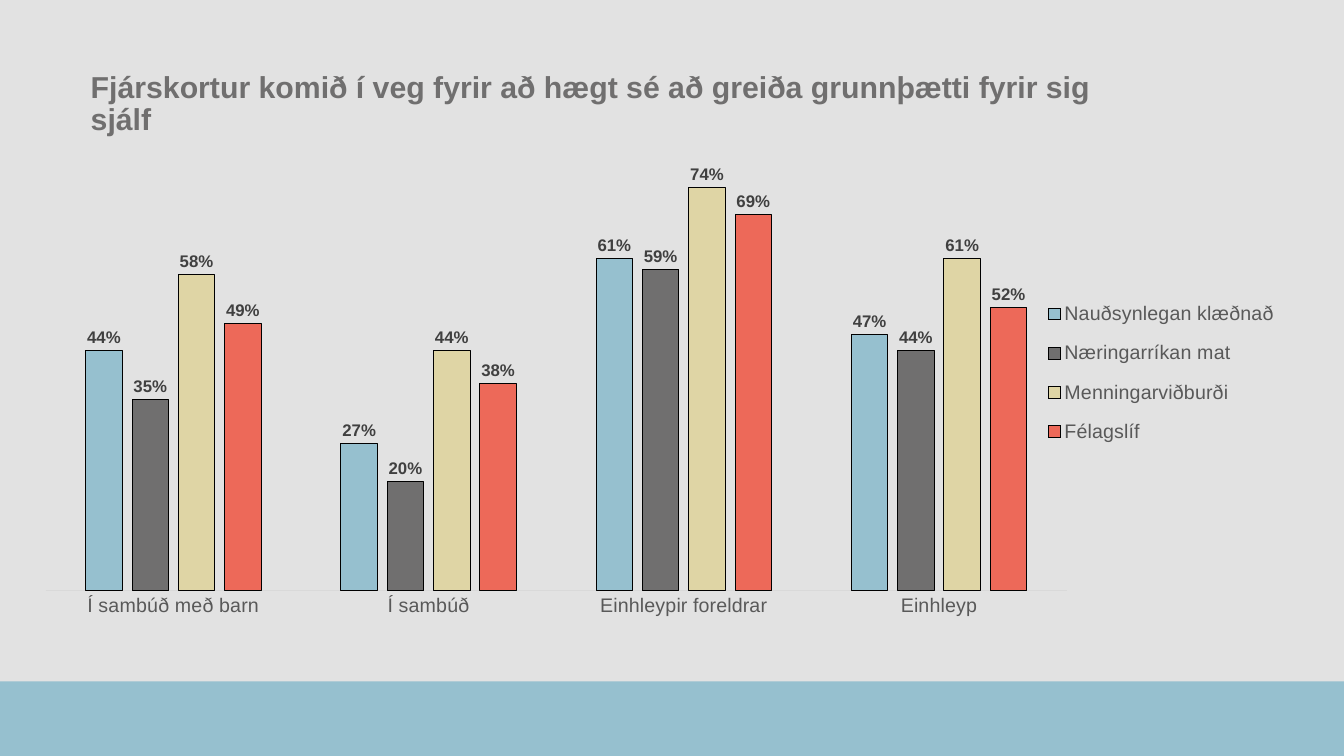
from dataclasses import dataclass

from lxml import etree
from pptx import Presentation
from pptx.chart.data import CategoryChartData
from pptx.dml.color import RGBColor
from pptx.enum.chart import (XL_CHART_TYPE, XL_LABEL_POSITION,
                             XL_LEGEND_POSITION, XL_TICK_MARK)
from pptx.enum.shapes import MSO_SHAPE
from pptx.enum.text import MSO_ANCHOR, MSO_AUTO_SIZE, PP_ALIGN
from pptx.oxml.ns import qn
from pptx.util import Inches, Pt

COLUMN = XL_CHART_TYPE.COLUMN_CLUSTERED
OUTSIDE = XL_LABEL_POSITION.OUTSIDE_END
RIGHT = XL_LEGEND_POSITION.RIGHT
NO_TICK = XL_TICK_MARK.NONE
RECT = MSO_SHAPE.RECTANGLE
MIDDLE = MSO_ANCHOR.MIDDLE
NO_FIT = MSO_AUTO_SIZE.NONE
LEFT = PP_ALIGN.LEFT

# Content
TITLE = ("Fjárskortur komið í veg fyrir að hægt sé að greiða "
         "grunnþætti fyrir sig sjálf")
GROUPS = ["Í sambúð með barn", "Í sambúð", "Einhleypir foreldrar", "Einhleyp"]
SERIES = [
    ("Nauðsynlegan klæðnað", (0.44, 0.27, 0.61, 0.47), "96C0CF"),
    ("Næringarríkan mat", (0.35, 0.20, 0.59, 0.44), "706F6F"),
    ("Menningarviðburði", (0.58, 0.44, 0.74, 0.61), "DFD5A5"),
    ("Félagslíf", (0.49, 0.38, 0.69, 0.52), "ED6959"),
]

# Places: left, top, width, height in inches
WIDE, HIGH, BAND = 13.33, 7.5, 0.74
TITLE_BOX = (0.8, 0.7, 10.24, 0.68)
CHART_BOX = (0.33, 1.38, 12.5, 5.21)
# Shares of the chart box
PLOT_AREA = (0.01, 0.03, 0.81, 0.83)
KEY_AREA = (0.8, 0.28, 0.19, 0.33)


@dataclass(frozen=True)
class Theme:
    font: str = "Arial"
    back: str = "E2E2E2"
    band: str = "96C0CF"
    title: str = "706F6F"
    text: str = "595959"
    label: str = "404040"
    axis: str = "D9D9D9"
    edge: str = "000000"
    title_size: float = 21.6
    text_size: float = 14
    label_size: float = 12
    line: float = 0.75


THEME = Theme()


def box(area):
    return [Inches(v) for v in area]


def style(font, size, color, bold=False):
    font.name = THEME.font
    font.size = Pt(size)
    font.bold = bold
    font.color.rgb = RGBColor.from_string(color)


def paint(fill, color):
    fill.solid()
    fill.fore_color.rgb = RGBColor.from_string(color)


def outline(line, color):
    line.width = Pt(THEME.line)
    paint(line.fill, color)


def place(parent, index, area, inner=False):
    """Give a chart part a fixed place, in shares of the chart box."""
    for old in parent.findall(qn("c:layout")):
        parent.remove(old)
    layout = etree.Element(qn("c:layout"))
    manual = etree.SubElement(layout, qn("c:manualLayout"))
    parts = [("layoutTarget", "inner")] if inner else []
    parts += [("xMode", "edge"), ("yMode", "edge")]
    parts += zip("xywh", area)
    for tag, value in parts:
        etree.SubElement(manual, qn("c:" + tag)).set("val", str(value))
    parent.insert(index, layout)


def add_band(slide):
    area = box((0, HIGH - BAND, WIDE, BAND))
    band = slide.shapes.add_shape(RECT, *area)
    band.shadow.inherit = False
    paint(band.fill, THEME.band)
    band.line.fill.background()


def add_title(slide):
    title = slide.shapes.title
    title.left, title.top, title.width, title.height = box(TITLE_BOX)
    frame = title.text_frame
    frame.text = TITLE
    frame.word_wrap = True
    frame.auto_size = NO_FIT
    frame.vertical_anchor = MIDDLE
    para = frame.paragraphs[0]
    para.alignment = LEFT
    para.line_spacing = 0.9
    style(para.runs[0].font, THEME.title_size, THEME.title, True)


def add_bars(slide):
    data = CategoryChartData(number_format="0%")
    data.categories = GROUPS
    for name, values, _ in SERIES:
        data.add_series(name, values)
    chart = slide.shapes.add_chart(COLUMN, *box(CHART_BOX), data).chart
    chart.has_title = False
    style(chart.font, THEME.text_size, THEME.text)

    # Bars and their labels
    plot = chart.plots[0]
    plot.gap_width, plot.overlap = 219, -27
    plot.vary_by_categories = False
    for series, (_, _, color) in zip(plot.series, SERIES):
        paint(series.format.fill, color)
        outline(series.format.line, THEME.edge)
        labels = series.data_labels
        labels.show_value = True
        labels.position = OUTSIDE
        labels.number_format = "0%"
        labels.number_format_is_linked = False
        style(labels.font, THEME.label_size, THEME.label, True)

    # Axes
    groups = chart.category_axis
    groups.major_tick_mark = groups.minor_tick_mark = NO_TICK
    outline(groups.format.line, THEME.axis)
    style(groups.tick_labels.font, THEME.text_size, THEME.text)
    share = chart.value_axis
    share.minimum_scale, share.maximum_scale = 0, 0.8
    share.has_major_gridlines = False
    share.visible = False

    # Legend
    chart.has_legend = True
    key = chart.legend
    key.position = RIGHT
    key.include_in_layout = False
    style(key.font, THEME.text_size, THEME.text)

    root = chart.plots[0]._element.getparent()
    place(root, 0, PLOT_AREA, inner=True)
    place(key._element, 1, KEY_AREA)


def main():
    deck = Presentation()
    deck.slide_width, deck.slide_height = Inches(WIDE), Inches(HIGH)
    slide = deck.slides.add_slide(deck.slide_layouts[5])
    paint(slide.background.fill, THEME.back)
    add_band(slide)
    add_title(slide)
    add_bars(slide)
    deck.save("out.pptx")


if __name__ == "__main__":
    main()
